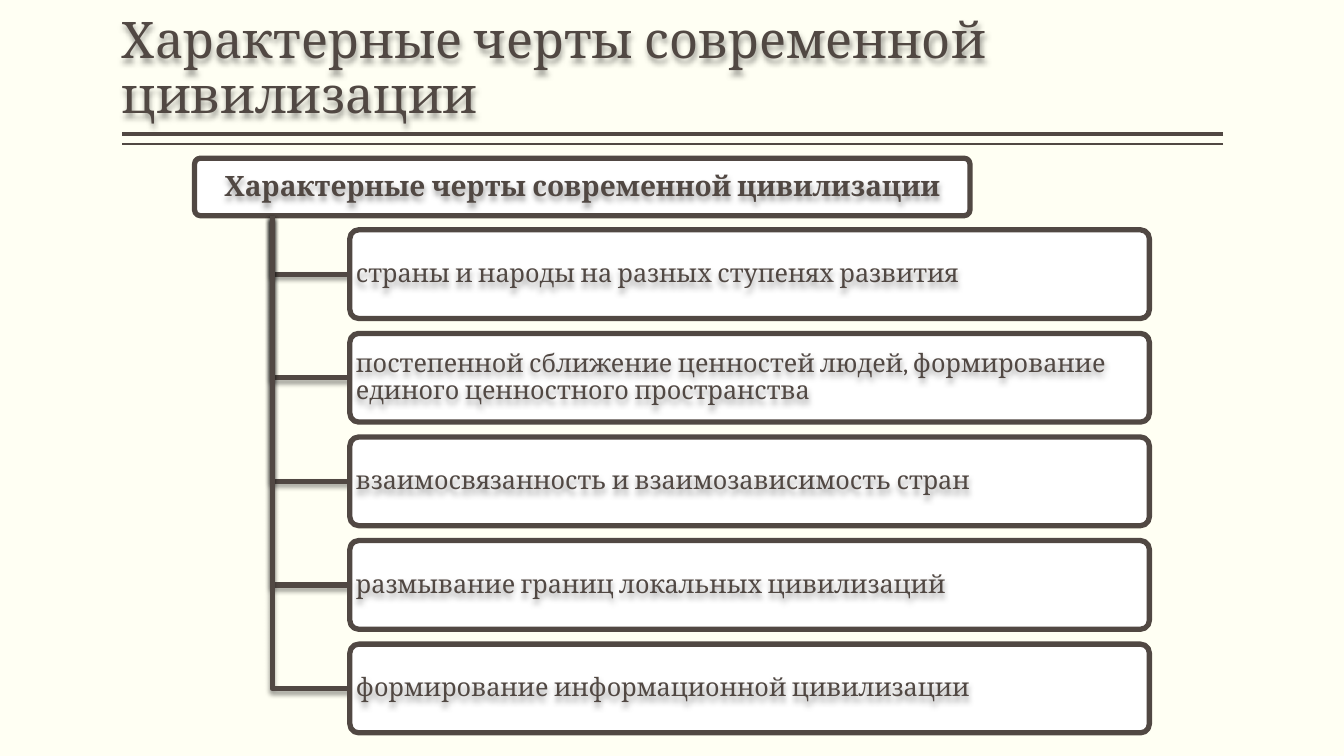
from lxml.etree import SubElement
from pptx import Presentation
from pptx.dml.color import RGBColor
from pptx.enum.shapes import MSO_CONNECTOR, MSO_SHAPE
from pptx.enum.text import MSO_ANCHOR, PP_ALIGN
from pptx.oxml.ns import qn
from pptx.util import Inches, Pt

INK = "514843"
PAPER = "FFFFF3"
WHITE = "FFFFFF"
rgb = RGBColor.from_string


def add_shadow(sp, blur, dist):
    effects = SubElement(sp._element.spPr, qn("a:effectLst"))
    shadow = SubElement(effects, qn("a:outerShdw"), blurRad=str(Pt(blur)),
                        dist=str(Pt(dist)), dir="5400000", algn="ctr", rotWithShape="0")
    color = SubElement(shadow, qn("a:srgbClr"), val="000000")
    SubElement(color, qn("a:alpha"), val="38000")


def add_text(sp, text, size, anchor, align, side, edge, bold=False):
    sp.fill.background()
    add_shadow(sp, 4, 3)
    tf = sp.text_frame
    tf.word_wrap = True
    tf.vertical_anchor = anchor
    tf.margin_left = tf.margin_right = Inches(side)
    tf.margin_top = tf.margin_bottom = Inches(edge)
    p = tf.paragraphs[0]
    p.alignment = align
    p.line_spacing = 0.9
    r = p.add_run()
    r.text = text
    r.font.name = "Cambria"
    r.font.size = Pt(size)
    r.font.bold = bold
    r.font.color.rgb = rgb(INK)


prs = Presentation()
prs.slide_width, prs.slide_height = Inches(13.33), Inches(7.5)
s = prs.slides.add_slide(prs.slide_layouts[5])
s.background.fill.solid()
s.background.fill.fore_color.rgb = rgb(PAPER)

heading = "Характерные черты современной цивилизации"
left, width = 1.21, 10.92

for y, weight in [(1.33, 3), (1.43, 1)]:
    rule = s.shapes.add_connector(MSO_CONNECTOR.STRAIGHT, Inches(left + width), Inches(y),
                                  Inches(left), Inches(y))
    rule.line.color.rgb = rgb(INK)
    rule.line.width = Pt(weight)
    SubElement(rule._element.spPr, qn("a:effectLst"))

title = s.shapes.title
title.left, title.top, title.width, title.height = map(Inches, (left, 0.08, width, 1.2))
add_text(title, heading, 36, MSO_ANCHOR.BOTTOM, PP_ALIGN.LEFT, 0, 0.05)

features = [
    "страны и народы на разных ступенях развития",
    "постепенной сближение ценностей людей, формирование единого ценностного пространства",
    "взаимосвязанность и взаимозависимость стран",
    "размывание границ локальных цивилизаций",
    "формирование информационной цивилизации",
]
row_top, row_pitch, row_height = 2.28, 1.0275, 0.88
trunk_x, trunk_top, branch_x = 2.7, 2.14, 3.47

boxes = [(1.93, 1.57, 7.69, 0.57, heading, 20, PP_ALIGN.CENTER, True)]
for i, feature in enumerate(features):
    boxes.append((branch_x, row_top + i * row_pitch, 7.93, row_height,
                  feature, 18, PP_ALIGN.LEFT, False))

for x, y, w, h, text, size, align, is_root in boxes:
    if not is_root:
        middle = y + h / 2
        fb = s.shapes.build_freeform(Inches(trunk_x), Inches(trunk_top))
        fb.add_line_segments([(Inches(trunk_x), Inches(middle)),
                              (Inches(branch_x), Inches(middle))], close=False)
        branch = fb.convert_to_shape()
        branch.fill.background()
        branch.line.color.rgb = rgb(INK)
        branch.line.width = Pt(3.78)
        add_shadow(branch, 3.5, 2)

    sp = s.shapes.add_shape(MSO_SHAPE.ROUNDED_RECTANGLE, *map(Inches, (x, y, w, h)))
    sp.adjustments[0] = 0.1
    sp.shadow.inherit = False
    sp.fill.solid()
    sp.fill.fore_color.rgb = rgb(WHITE)
    sp.line.color.rgb = rgb(INK)
    sp.line.width = Pt(3.78)

    label = s.shapes.add_textbox(*map(Inches, (x + 0.02, y + 0.02, w - 0.04, h - 0.04)))
    add_text(label, text, size, MSO_ANCHOR.MIDDLE, align, 0.04, 0.02, is_root)

prs.save("out.pptx")
